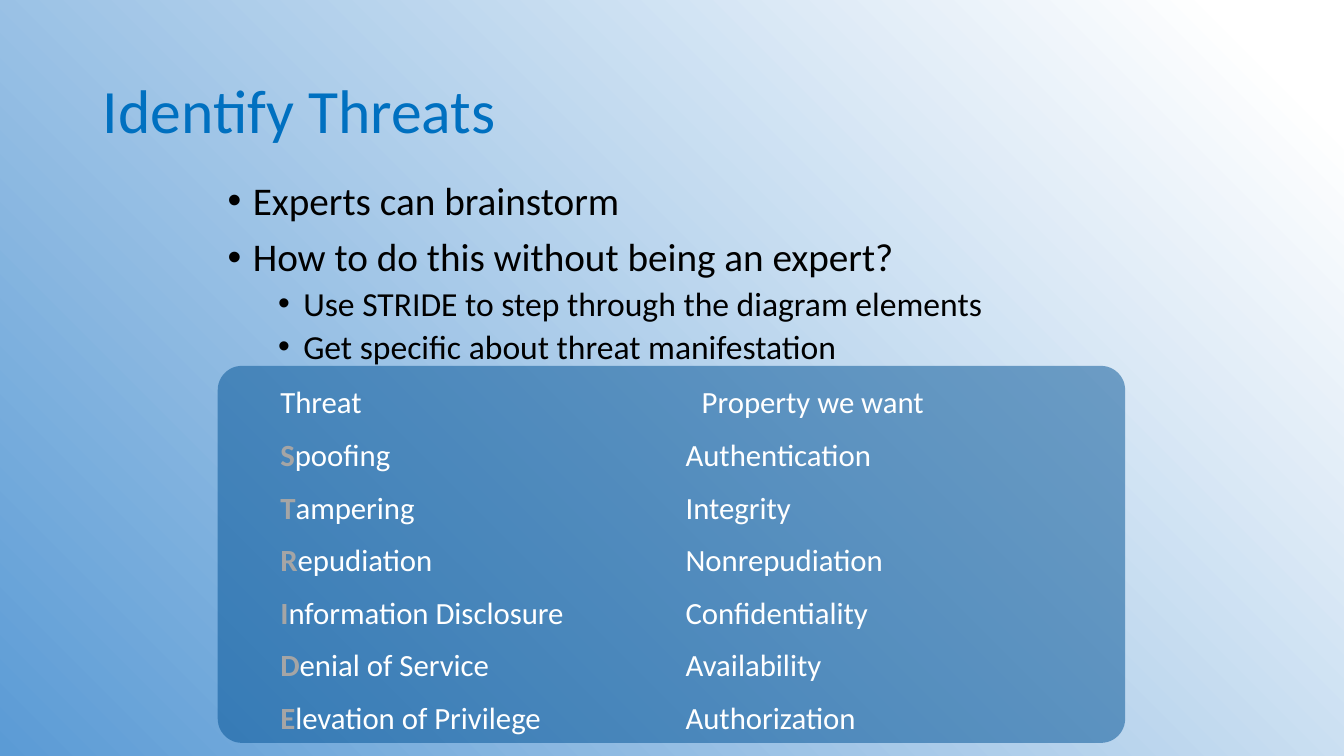
"""Build the "Identify Threats" slide with its STRIDE table."""
from dataclasses import dataclass

import lxml.etree
import pptx
import pptx.dml.color
import pptx.enum.shapes
import pptx.enum.text
import pptx.oxml.ns
import pptx.util

Inches, Pt = pptx.util.Inches, pptx.util.Pt
qn = pptx.oxml.ns.qn

FONT = "Calibri"
NO_GRID_STYLE = "{2D5ABB26-0587-4C30-8999-92F81FD0307C}"
COLORS = {
    "title": "0070C0",
    "text": "000000",
    "panel": "005194",
    "cell": "FFFFFF",
    "initial": "A5A5A5",
    "bg_start": "FFFFFF",
    "bg_end": "5B9BD5",
}


@dataclass
class Bullet:
    text: str
    level: int
    size: int
    margin: float
    before: int


@dataclass
class Threat:
    name: str
    wanted: str


BULLETS = [
    Bullet("Experts can brainstorm", 0, 28, 0.25, 10),
    Bullet("How to do this without being an expert?", 0, 28, 0.25, 10),
    Bullet("Use STRIDE to step through the diagram elements", 1, 24, 0.75, 5),
    Bullet("Get specific about threat manifestation", 1, 24, 0.75, 5),
]
THREATS = [
    Threat("Spoofing", "Authentication"),
    Threat("Tampering", "Integrity"),
    Threat("Repudiation", "Nonrepudiation"),
    Threat("Information Disclosure", "Confidentiality"),
    Threat("Denial of Service", "Availability"),
    Threat("Elevation of Privilege", "Authorization"),
]


def rgb(name: str) -> pptx.dml.color.RGBColor:
    """Return a named colour."""
    return pptx.dml.color.RGBColor.from_string(COLORS[name])


def add_run(p, text: str, size: int, color: str, bold: bool = False) -> None:
    """Append one formatted run to a paragraph."""
    r = p.add_run()
    r.text = text
    r.font.name = FONT
    r.font.size = Pt(size)
    r.font.bold = bold
    r.font.color.rgb = rgb(color)


def set_background(s) -> None:
    """Fill the slide with a diagonal gradient."""
    fill = s.background.fill
    fill.gradient()
    fill.gradient_angle = 225
    for stop, color, pos in zip(fill.gradient_stops, ("bg_start", "bg_end"), (0.06, 1)):
        stop.color.rgb = rgb(color)
        stop.position = pos


def set_title(s, text: str) -> None:
    """Place and format the title placeholder."""
    sp = s.shapes.title
    sp.left, sp.top, sp.width, sp.height = map(Inches, (0.92, 0.4, 11.5, 1.45))
    tf = sp.text_frame
    tf.auto_size = pptx.enum.text.MSO_AUTO_SIZE.NONE
    tf.vertical_anchor = pptx.enum.text.MSO_ANCHOR.MIDDLE
    p = tf.paragraphs[0]
    p.alignment = pptx.enum.text.PP_ALIGN.LEFT
    p.line_spacing = 0.9
    add_run(p, text, 44, "title")


def add_panel(s) -> None:
    """Draw the translucent panel behind the table."""
    sp = s.shapes.add_shape(pptx.enum.shapes.MSO_SHAPE.ROUNDED_RECTANGLE,
                            Inches(2.16), Inches(3.63), Inches(9), Inches(3.74))
    sp.adjustments[0] = 0.064
    sp.shadow.inherit = False
    sp.line.fill.background()
    sp.fill.solid()
    sp.fill.fore_color.rgb = rgb("panel")
    color = sp.fill._xPr.find(".//" + qn("a:srgbClr"))
    lxml.etree.SubElement(color, qn("a:alpha"), val="50000")


def add_bullets(s, bullets: list[Bullet]) -> None:
    """Write the bulleted list."""
    sp = s.shapes.add_textbox(Inches(2.16), Inches(1.75), Inches(9), Inches(2.36))
    tf = sp.text_frame
    tf.word_wrap = True
    for i, b in enumerate(bullets):
        p = tf.add_paragraph() if i else tf.paragraphs[0]
        p.level = b.level
        p.line_spacing = 0.9
        p.space_before = Pt(b.before)
        pPr = p._p.get_or_add_pPr()
        pPr.set("marL", str(Inches(b.margin)))
        pPr.set("indent", str(Inches(-0.25)))
        lxml.etree.SubElement(pPr, qn("a:buFont"), typeface="Arial")
        lxml.etree.SubElement(pPr, qn("a:buChar"), char="•")
        add_run(p, b.text, b.size, "text")


def cell_paragraph(cell):
    """Clear a cell's fill and return its spaced paragraph."""
    cell.fill.background()
    p = cell.text_frame.paragraphs[0]
    p.line_spacing = 1.15
    p.space_before = Pt(10)
    return p


def add_threat_table(s, threats: list[Threat]) -> None:
    """Add the table of threats and wanted properties."""
    rows = len(threats) + 1
    frame = s.shapes.add_table(rows, 2, Inches(2.68), Inches(3.71),
                               Inches(7.43), Inches(0.5 * rows))
    table = frame.table
    table.first_row = table.horz_banding = False
    table._tbl.tblPr.find(qn("a:tableStyleId")).text = NO_GRID_STYLE
    for column, width in zip(table.columns, (4.02, 3.41)):
        column.width = Inches(width)

    table.cell(0, 0).merge(table.cell(0, 1))
    p = cell_paragraph(table.cell(0, 0))
    tabs = lxml.etree.SubElement(p._p.get_or_add_pPr(), qn("a:tabLst"))
    lxml.etree.SubElement(tabs, qn("a:tab"), pos=str(Inches(4.18)), algn="l")
    add_run(p, "Threat\tProperty we want", 22, "cell")

    for row, threat in enumerate(threats, 1):
        p = cell_paragraph(table.cell(row, 0))
        add_run(p, threat.name[0], 22, "initial", True)
        add_run(p, threat.name[1:], 22, "cell")
        add_run(cell_paragraph(table.cell(row, 1)), threat.wanted, 22, "cell")


def main() -> None:
    """Build and save the slide."""
    prs = pptx.Presentation()
    prs.slide_width, prs.slide_height = Inches(13.33), Inches(7.5)
    s = prs.slides.add_slide(prs.slide_layouts[5])
    set_background(s)
    set_title(s, "Identify Threats")
    add_panel(s)
    add_bullets(s, BULLETS)
    add_threat_table(s, THREATS)
    prs.save("out.pptx")


if __name__ == "__main__":
    main()
